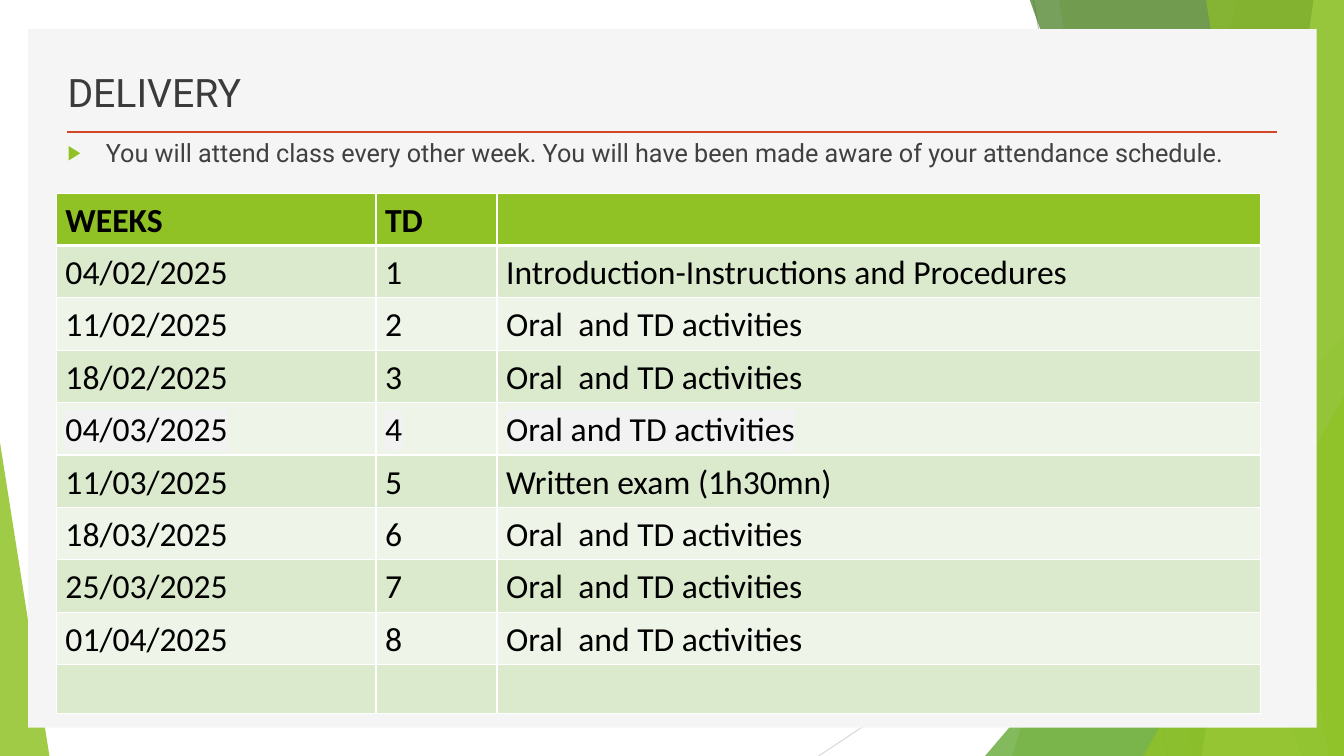
from lxml import etree
from pptx import Presentation
from pptx.dml.color import RGBColor
from pptx.enum.shapes import MSO_CONNECTOR, MSO_SHAPE
from pptx.enum.text import MSO_ANCHOR, MSO_AUTO_SIZE, PP_ALIGN
from pptx.oxml.ns import qn
from pptx.util import Inches, Pt

LINE = MSO_CONNECTOR.STRAIGHT
RECTANGLE = MSO_SHAPE.RECTANGLE
TRIANGLE = MSO_SHAPE.ISOSCELES_TRIANGLE
TOP, MIDDLE, BOTTOM = MSO_ANCHOR.TOP, MSO_ANCHOR.MIDDLE, MSO_ANCHOR.BOTTOM
LEFT = PP_ALIGN.LEFT
NO_AUTOFIT = MSO_AUTO_SIZE.NONE

COLORS = {
    "green": "90C226", "mid_green": "54A021", "dark_green": "3F7819", "lime": "C0E474",
    "grey_line": "BFBFBF", "pale_line": "D9D9D9", "panel": "F5F5F5", "rule": "D24726",
    "title": "3B3B3B", "body": "404040", "black": "000000", "white": "FFFFFF",
    "odd_row": "DBE9CD", "even_row": "EEF4E8", "highlight": "F2F2F2",
}


def paint(shape, color, opacity=100):
    """Give a shape a plain fill without line or shadow."""
    shape.shadow.inherit = False
    shape.line.fill.background()
    shape.fill.solid()
    shape.fill.fore_color.rgb = RGBColor.from_string(COLORS[color])
    if opacity < 100:
        rgb = shape.fill._xPr.find(".//" + qn("a:srgbClr"))
        etree.SubElement(rgb, qn("a:alpha"), val=str(opacity * 1000))


def format_font(font, color, **values):
    font.color.rgb = RGBColor.from_string(COLORS[color])
    for name, value in values.items():
        setattr(font, name, value)


presentation = Presentation()
presentation.slide_width = Inches(13.33)
presentation.slide_height = Inches(7.5)
slide = presentation.slides.add_slide(presentation.slide_layouts[1])
for placeholder in list(slide.placeholders):
    if placeholder.placeholder_format.idx > 1:
        placeholder._element.getparent().remove(placeholder._element)
shapes = slide.shapes

# Green facets and the panel, from back to front
decorations = [
    ("line", (10.25, 0, 11.58, 7.5), "grey_line", 0.75),
    ("line", (13.33, 4.03, 8.12, 7.5), "pale_line", 0.75),
    # Facet: top left x, bottom left x; the right side is the slide edge
    ("facet", (12.28, 10.04), "green", 30),
    ("facet", (10.5, 11.83), "green", 20),
    ("right triangle", (9.77, 3.33, 3.56, 4.17), "mid_green", 72),
    ("facet", (10.21, 12.91), "dark_green", 70),
    ("facet", (13.03, 11.92), "lime", 70),
    ("facet", (11.96, 13.18), "green", 65),
    ("right triangle", (11.34, 3.93, 1.99, 3.57), "green", 80),
    ("left triangle", (0, 4.39, 0.49, 3.11), "green", 85),
    ("panel", (0.28, 0.29, 12.78, 6.93), "panel", 100),
    ("line", (0.66, 1.31, 12.67, 1.31), "rule", 2),
]
for kind, numbers, color, amount in decorations:
    lengths = [Inches(number) for number in numbers]
    if kind == "line":
        line = shapes.add_connector(LINE, *lengths)
        line.line.color.rgb = RGBColor.from_string(COLORS[color])
        line.line.width = Pt(amount)
        etree.SubElement(line._element.spPr, qn("a:effectLst"))
    elif kind == "facet":
        top_left, bottom_left = lengths
        top, bottom, right = Inches(-0.01), Inches(7.5), Inches(13.33)
        outline = shapes.build_freeform(top_left, top)
        outline.add_line_segments([(right, top), (right, bottom), (bottom_left, bottom)])
        paint(outline.convert_to_shape(), color, amount)
    else:
        shape = shapes.add_shape(RECTANGLE if kind == "panel" else TRIANGLE, *lengths)
        if kind != "panel":
            shape.adjustments[0] = 1 if kind == "right triangle" else 0
        paint(shape, color, amount)

# Title and bullet
title, body = shapes.title, slide.placeholders[1]
texts = [
    (title, (0.57, 0.49, 7.52, 0.7), BOTTOM, "DELIVERY", "title", 28),
    (body, (0.57, 1.31, 11.94, 5.15), TOP,
     "You will attend class every other week. You will have been made aware of "
     "your attendance schedule.", "body", 18),
]
for placeholder, box, anchor, text, color, size in texts:
    for name, number in zip(("left", "top", "width", "height"), box):
        setattr(placeholder, name, Inches(number))
    frame = placeholder.text_frame
    frame.text = text
    frame.word_wrap = True
    frame.auto_size = NO_AUTOFIT
    frame.vertical_anchor = anchor
    frame.paragraphs[0].alignment = LEFT
    format_font(frame.paragraphs[0].runs[0].font, color, name="Roboto", size=Pt(size))
    shapes._spTree.append(placeholder._element)

bullet = body.text_frame.paragraphs[0]
bullet.space_before = Pt(10)
properties = bullet._p.get_or_add_pPr()
properties.set("marL", str(Inches(0.38)))
properties.set("indent", str(Inches(-0.38)))
bullet_color = etree.SubElement(properties, qn("a:buClr"))
etree.SubElement(bullet_color, qn("a:srgbClr"), val=COLORS["green"])
etree.SubElement(properties, qn("a:buSzPct"), val="80000")
etree.SubElement(properties, qn("a:buFont"), typeface="Arial")
etree.SubElement(properties, qn("a:buChar"), char="▶")

# Schedule
oral = "Oral  and TD activities"
schedule = [
    ("WEEKS", "TD", ""),
    ("04/02/2025", "1", "Introduction-Instructions and Procedures"),
    ("11/02/2025", "2", oral),
    ("18/02/2025", "3", oral),
    ("04/03/2025", "4", "Oral and TD activities"),
    ("11/03/2025", "5", "Written exam (1h30mn)"),
    ("18/03/2025", "6", oral),
    ("25/03/2025", "7", oral),
    ("01/04/2025", "8", oral),
    ("", "", ""),
]
HIGHLIGHTED_ROW = 4
table = shapes.add_table(len(schedule), 3, Inches(0.56), Inches(1.92),
                         Inches(11.94), Inches(5.2)).table
table.first_row = table.horz_banding = False
for column, width in zip(table.columns, (3.17, 1.2, 7.57)):
    column.width = Inches(width)
row_heights = [0.51] + [0.52] * 8 + [0.49]
margins = {"margin_left": 0.09, "margin_right": 0.09, "margin_top": 0.04, "margin_bottom": 0.04}

for row, texts in enumerate(schedule):
    table.rows[row].height = Inches(row_heights[row])
    fill = "green" if row == 0 else "odd_row" if row % 2 else "even_row"
    for column, text in enumerate(texts):
        cell = table.cell(row, column)
        cell.vertical_anchor = MIDDLE
        for name, number in margins.items():
            setattr(cell, name, Inches(number))
        for side in "LRTB":
            thick = (row, side) in ((0, "B"), (1, "T"))
            border = etree.SubElement(cell._tc.get_or_add_tcPr(), qn("a:ln" + side),
                                      w=str(Pt(3 if thick else 1)))
            solid = etree.SubElement(border, qn("a:solidFill"))
            etree.SubElement(solid, qn("a:srgbClr"), val=COLORS["white"])
        cell.fill.solid()
        cell.fill.fore_color.rgb = RGBColor.from_string(COLORS[fill])
        if not text:
            continue
        paragraph = cell.text_frame.paragraphs[0]
        paragraph.line_spacing = 1.07
        paragraph.space_after = Pt(8)
        run = paragraph.add_run()
        run.text = text
        format_font(run.font, "black", name="Calibri", size=Pt(24), bold=row == 0)
        if row == HIGHLIGHTED_ROW:
            highlight = etree.Element(qn("a:highlight"))
            etree.SubElement(highlight, qn("a:srgbClr"), val=COLORS["highlight"])
            run._r.rPr.find(qn("a:solidFill")).addnext(highlight)

presentation.save("out.pptx")
